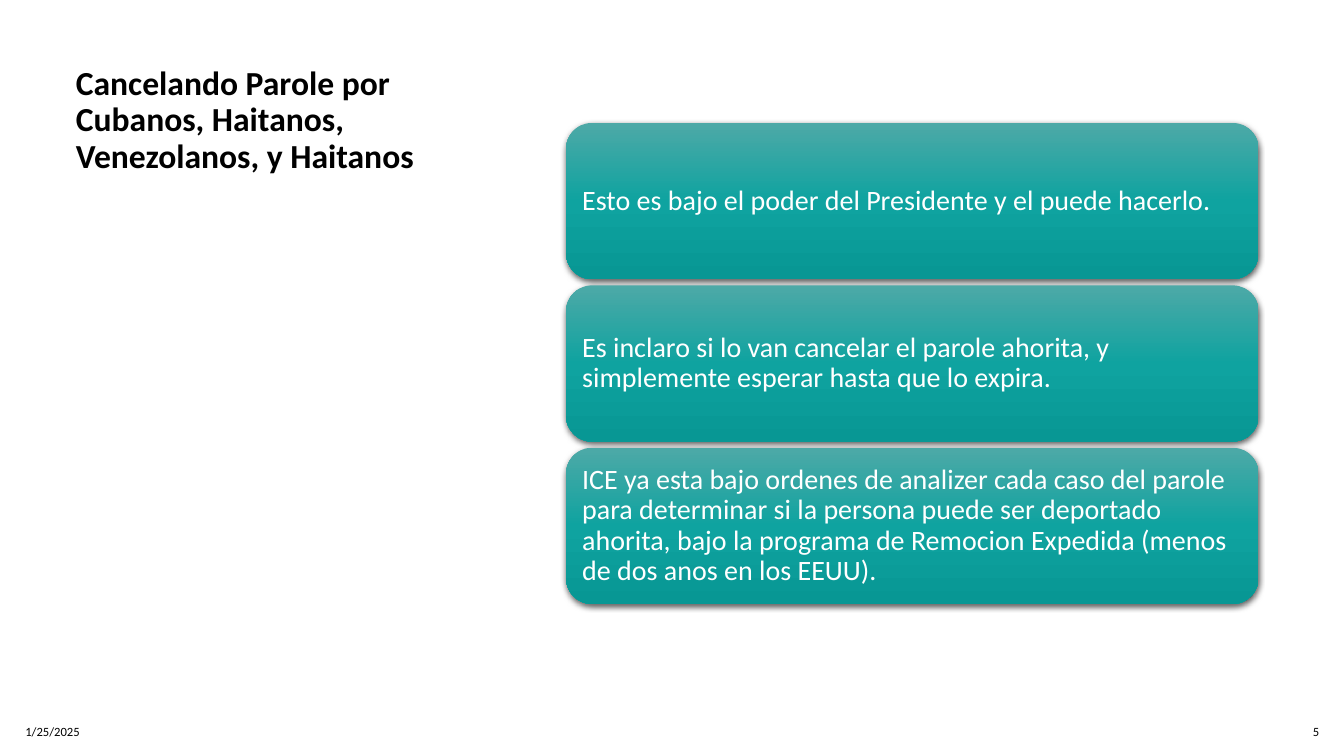
from lxml import etree
from pptx import Presentation
from pptx.dml.color import RGBColor
from pptx.enum.shapes import MSO_SHAPE
from pptx.enum.text import MSO_ANCHOR, MSO_AUTO_SIZE, PP_ALIGN
from pptx.oxml.ns import qn
from pptx.util import Pt

ROUNDED = MSO_SHAPE.ROUNDED_RECTANGLE
TOP, MIDDLE = MSO_ANCHOR.TOP, MSO_ANCHOR.MIDDLE
LEFT, RIGHT = PP_ALIGN.LEFT, PP_ALIGN.RIGHT
FIXED_SIZE = MSO_AUTO_SIZE.NONE
TITLE_ONLY = 5
TEAL_STOPS = [(0, "4DA9A7"), (50, "0FA3A0"), (100, "089794")]
CARD_GAP = 4.4
POINTS = [
    "Esto es bajo el poder del Presidente y el puede hacerlo.",
    "Es inclaro si lo van cancelar el parole ahorita, y simplemente esperar hasta que lo expira.",
    "ICE ya esta bajo ordenes de analizer cada caso del parole para determinar si la persona "
    "puede ser deportado ahorita, bajo la programa de Remocion Expedida (menos de dos anos en los EEUU).",
]


def color(hex_value):
    """Return the colour of a hex string."""
    return RGBColor.from_string(hex_value)


def write(frame, text, size, hex_value="000000", bold=False, align=LEFT, anchor=MIDDLE, spacing=None):
    """Fill a text frame with one formatted paragraph."""
    frame.word_wrap = True
    frame.auto_size = FIXED_SIZE
    frame.vertical_anchor = anchor
    frame.text = text
    paragraph = frame.paragraphs[0]
    paragraph.alignment = align
    paragraph.line_spacing = spacing
    paragraph.font.name = "Calibri"
    paragraph.font.size = Pt(size)
    paragraph.font.bold = bold
    paragraph.font.color.rgb = color(hex_value)


def add_color(parent, hex_value):
    """Append an sRGB colour element to an XML parent."""
    return etree.SubElement(parent, qn("a:srgbClr"), val=hex_value)


def shade(card):
    """Give a card its vertical teal gradient and soft shadow."""
    card.fill.gradient()
    card.fill.gradient_angle = 270
    stops = card._element.spPr.find(".//" + qn("a:gsLst"))
    for stop in list(stops):
        stops.remove(stop)
    for percent, hex_value in TEAL_STOPS:
        add_color(etree.SubElement(stops, qn("a:gs"), pos=str(percent * 1000)), hex_value)
    card.line.fill.background()
    card.shadow.inherit = False
    effects = card._element.spPr.find(qn("a:effectLst"))
    shadow = etree.SubElement(effects, qn("a:outerShdw"), blurRad=str(Pt(4.5)),
                              dist=str(Pt(1.5)), dir="5400000", rotWithShape="0")
    etree.SubElement(add_color(shadow, "000000"), qn("a:alpha"), val="63000")


def place_title(slide, left, top, width, height):
    """Move and format the title placeholder."""
    title = slide.shapes.title
    title.left, title.top, title.width, title.height = map(Pt, (left, top, width, height))
    write(title.text_frame, "Cancelando Parole por Cubanos, Haitanos, Venezolanos, y Haitanos",
          24, bold=True, anchor=TOP, spacing=0.9)


def add_cards(slide, left, top, width, height):
    """Stack one rounded card per point, evenly within the box."""
    card_height = (height - CARD_GAP * (len(POINTS) - 1)) / len(POINTS)
    for index, point in enumerate(POINTS):
        card_top = top + index * (card_height + CARD_GAP)
        card = slide.shapes.add_shape(ROUNDED, Pt(left), Pt(card_top), Pt(width), Pt(card_height))
        shade(card)
        frame = card.text_frame
        frame.margin_left = frame.margin_right = frame.margin_top = frame.margin_bottom = Pt(6)
        write(frame, point, 20, "FFFFFF", spacing=0.9)


def add_footer(slide, left, top, width, height):
    """Put the date at the left and the slide number at the right of the box."""
    date_width, number_width = 275, 34
    date = slide.shapes.add_textbox(Pt(left), Pt(top), Pt(date_width), Pt(height))
    write(date.text_frame, "1/25/2025", 9)
    number = slide.shapes.add_textbox(Pt(left + width - number_width), Pt(top),
                                      Pt(number_width), Pt(height))
    write(number.text_frame, "5", 9, align=RIGHT)


def main():
    """Build and save the slide."""
    deck = Presentation()
    deck.slide_width, deck.slide_height = Pt(960), Pt(540)
    slide = deck.slides.add_slide(deck.slide_layouts[TITLE_ONLY])
    place_title(slide, 47, 44, 283, 138)
    add_footer(slide, 11, 508.5, 938.5, 28.5)
    add_cards(slide, 404.4, 87.8, 494.6, 343.6)
    deck.save("out.pptx")


if __name__ == "__main__":
    main()
